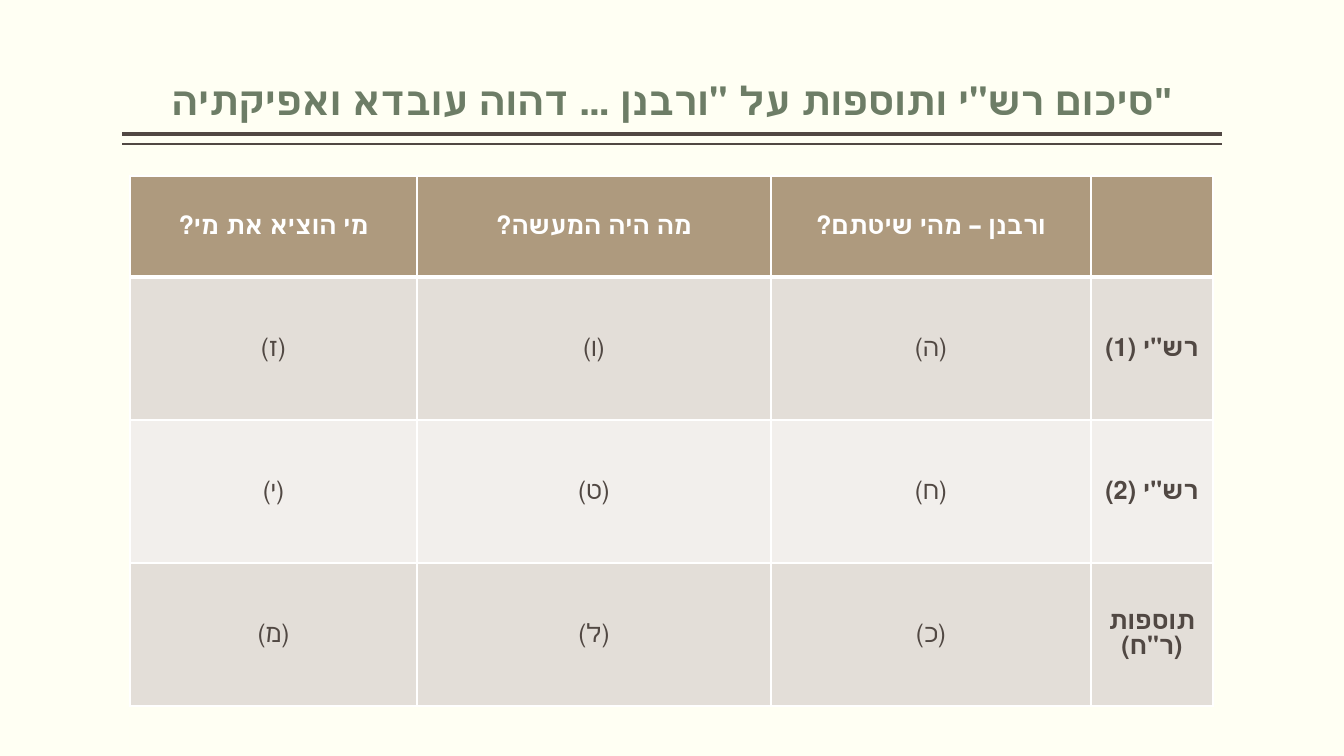
from dataclasses import dataclass
from pptx import Presentation
from pptx import util as u
from pptx.dml.color import RGBColor
from pptx.enum import shapes, text
from pptx.oxml import parse_xml
from pptx.oxml.ns import nsdecls

TITLE = 'סיכום רש"י ותוספות על "ורבנן ... דהוה עובדא ואפיקתיה"'
ROWS = [
    ("מי הוציא את מי?", "מה היה המעשה?", "ורבנן – מהי שיטתם?", ""),
    ("(ז)", "(ו)", "(ה)", 'רש"י (1)'),
    ("(י)", "(ט)", "(ח)", 'רש"י (2)'),
    ("(מ)", "(ל)", "(כ)", 'תוספות (ר"ח)'),
]
SLIDE = (1344, 756)
TITLE_BOX = (122, 8, 1100, 121)
TABLE_AT = (130, 176)
COLUMN_WIDTHS = (287, 354, 320, 122)
ROW_HEIGHTS = (101, 143, 143, 143)
RULES = [(134, 3), (144, 1)]


@dataclass(frozen=True)
class Theme:
    background: str = "FFFFF3"
    ink: str = "514843"
    title: str = "6D7D66"
    header: str = "AE9A7E"
    bands: tuple = ("E3DED8", "F2EFEC")
    white: str = "FFFFFF"
    title_font: str = "Arial"
    body_font: str = "Lato"
    title_size: int = 28
    body_size: int = 18


THEME = Theme()


def px(length):
    return u.Emu(round(length * 914400 / 100.8))


def paint(fill, color):
    fill.solid()
    fill.fore_color.rgb = RGBColor.from_string(color)


def apply(target, **values):
    for name, value in values.items():
        setattr(target, name, value)


def write(para, words, color, **font):
    para.alignment = text.PP_ALIGN.CENTER
    span = para.add_run()
    span.text = words
    apply(span.font, **font)
    span.font.color.rgb = RGBColor.from_string(color)


def add_borders(cell, bottom):
    properties = cell._tc.get_or_add_tcPr()
    for index, (side, width) in enumerate(
            [("lnL", 1), ("lnR", 1), ("lnT", 1), ("lnB", bottom)]):
        properties.insert(index, parse_xml(
            f'<a:{side} {nsdecls("a")} w="{u.Pt(width)}"><a:solidFill>'
            f'<a:srgbClr val="{THEME.white}"/></a:solidFill></a:{side}>'))


def add_title(page):
    box = page.shapes.title
    apply(box, **dict(zip(("left", "top", "width", "height"), map(px, TITLE_BOX))))
    frame = box.text_frame
    apply(frame, margin_left=0, margin_right=0, margin_top=px(5), margin_bottom=px(5),
          vertical_anchor=text.MSO_ANCHOR.BOTTOM, word_wrap=True,
          auto_size=text.MSO_AUTO_SIZE.NONE)
    para = frame.paragraphs[0]
    para.line_spacing = 0.9
    write(para, TITLE, THEME.title, name=THEME.title_font,
          size=u.Pt(THEME.title_size), bold=True)


def add_rules(page):
    left, _, width, _ = TITLE_BOX
    for y, weight in RULES:
        rule = page.shapes.add_connector(
            shapes.MSO_CONNECTOR.STRAIGHT, px(left + width), px(y), px(left), px(y))
        rule.line.width = u.Pt(weight)
        rule.line.color.rgb = RGBColor.from_string(THEME.ink)
        rule._element.spPr.append(parse_xml(f'<a:effectLst {nsdecls("a")}/>'))


def add_summary(page):
    table = page.shapes.add_table(
        len(ROWS), len(COLUMN_WIDTHS), *map(px, TABLE_AT),
        px(sum(COLUMN_WIDTHS)), px(sum(ROW_HEIGHTS))).table
    for column, width in zip(table.columns, COLUMN_WIDTHS):
        column.width = px(width)
    for row, height in zip(table.rows, ROW_HEIGHTS):
        row.height = px(height)
    for r, words_in_row in enumerate(ROWS):
        header = r == 0
        for c, words in enumerate(words_in_row):
            cell = table.cell(r, c)
            cell.vertical_anchor = text.MSO_ANCHOR.MIDDLE
            paint(cell.fill, THEME.header if header else THEME.bands[(r - 1) % 2])
            add_borders(cell, 3 if header else 1)
            if words:
                para = cell.text_frame.paragraphs[0]
                write(para, words, THEME.white if header else THEME.ink,
                      name=THEME.body_font, size=u.Pt(THEME.body_size),
                      bold=header or c == len(COLUMN_WIDTHS) - 1)
                para._p.get_or_add_pPr().set("rtl", "1")


def main():
    deck = Presentation()
    deck.slide_width, deck.slide_height = map(px, SLIDE)
    page = deck.slides.add_slide(deck.slide_layouts[5])
    paint(page.background.fill, THEME.background)
    add_rules(page)
    add_title(page)
    add_summary(page)
    deck.save("out.pptx")


if __name__ == "__main__":
    main()
